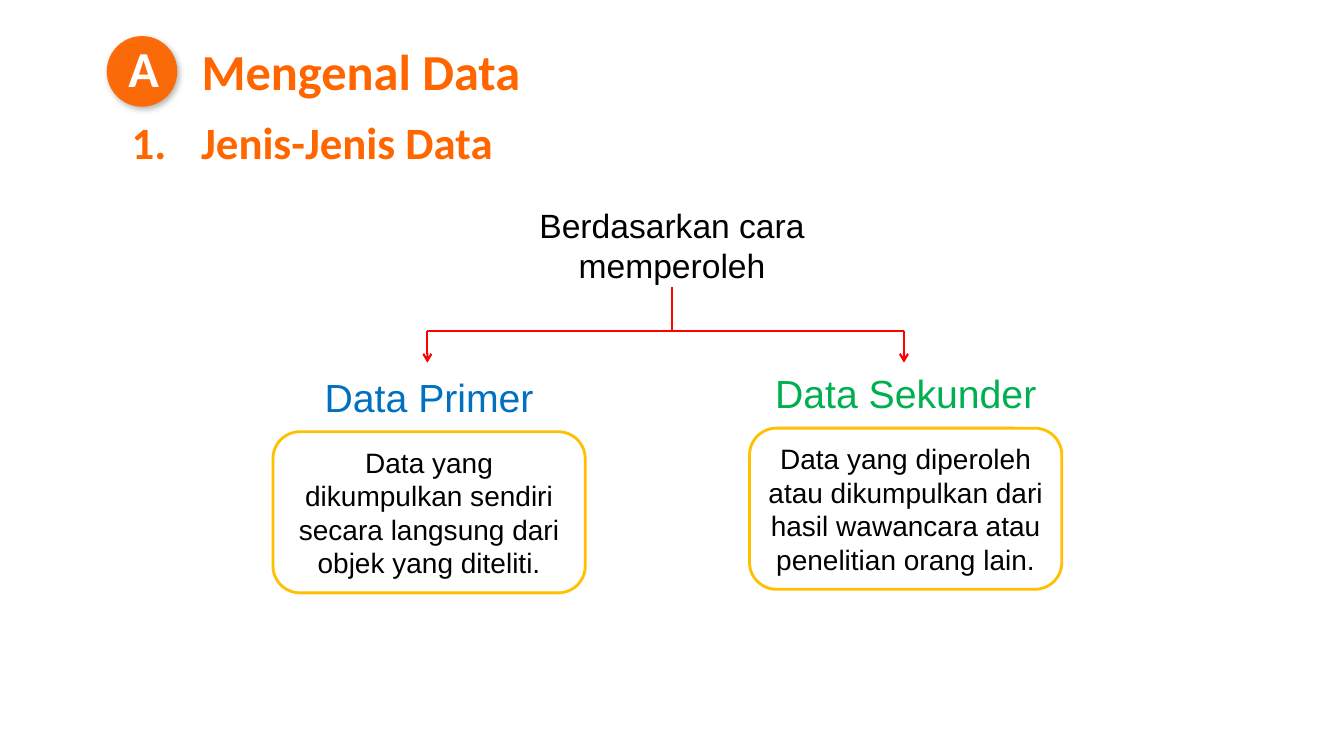
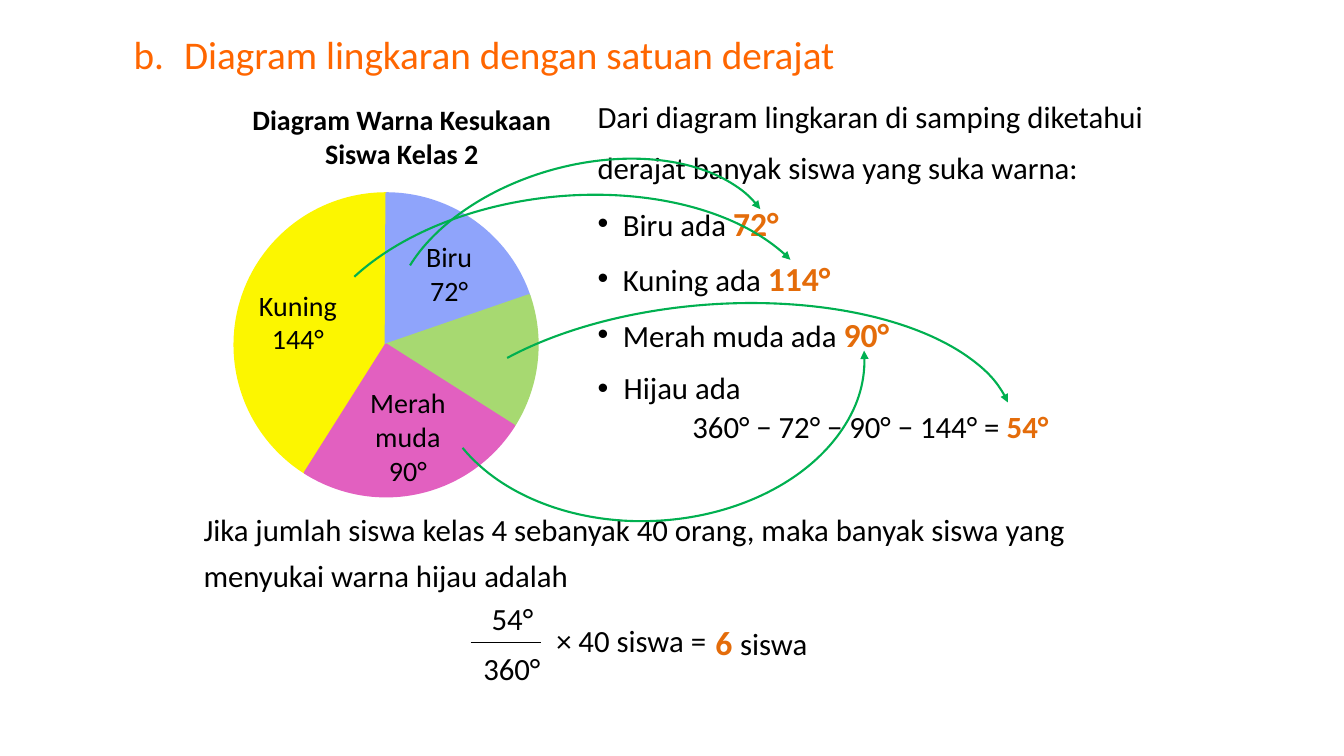
import itertools

import lxml.etree
import pptx
import pptx.dml.color
import pptx.enum.shapes
import pptx.enum.text
import pptx.oxml.ns
import pptx.util

Cm = pptx.util.Cm
SHAPE = pptx.enum.shapes.MSO_SHAPE
CENTER = pptx.enum.text.PP_ALIGN.CENTER
MIDDLE = pptx.enum.text.MSO_ANCHOR.MIDDLE
TOP = pptx.enum.text.MSO_ANCHOR.TOP

ORANGE = "FF6600"
ACCENT = "E46C0A"
BLACK = "000000"
RED = "FF0000"
GREEN = "00B050"
BLUE = "0070C0"
GOLD = "FFC000"


def rgb(value):
    return pptx.dml.color.RGBColor.from_string(value)


def add_xml(parent, tag, **attributes):
    child = lxml.etree.SubElement(parent, pptx.oxml.ns.qn(tag))
    for key, value in attributes.items():
        child.set(key, str(value))
    return child


def key(text, size=24):
    """A highlighted run."""
    return text, size


class Deck:
    body_font = "Calibri"
    diagram_font = "Arial"

    def __init__(self):
        self.file = pptx.Presentation()
        self.file.slide_width = Cm(33.87)
        self.file.slide_height = Cm(19.05)
        self.slide = None

    def new_slide(self):
        self.slide = self.file.slides.add_slide(self.file.slide_layouts[6])

    def text(self, box, *paragraphs, anchor=TOP, **style):
        """Each paragraph is a string or a list of strings and key() runs."""
        frame = self.slide.shapes.add_textbox(*map(Cm, box)).text_frame
        self.fill_frame(frame, paragraphs, anchor, **style)

    def fill_frame(self, frame, paragraphs, anchor, size=22, color=BLACK, bold=False,
                   font=body_font, align=None, spacing=None, hanging=None, tab=None):
        frame.word_wrap = True
        frame.vertical_anchor = anchor
        for index, content in enumerate(paragraphs):
            paragraph = frame.paragraphs[0] if index == 0 else frame.add_paragraph()
            properties = paragraph._p.get_or_add_pPr()
            if hanging:
                properties.set("marL", str(Cm(hanging)))
                properties.set("indent", str(-Cm(hanging)))
                add_xml(properties, "a:buFont", typeface="Arial")
                add_xml(properties, "a:buChar", char="•")
            if tab:
                stops = add_xml(properties, "a:tabLst")
                add_xml(stops, "a:tab", pos=Cm(tab), algn="l")
            paragraph.alignment = align
            paragraph.line_spacing = spacing
            paragraph.font.name = font
            paragraph.font.size = pptx.util.Pt(size)
            paragraph.font.bold = bold
            paragraph.font.color.rgb = rgb(color)
            for part in [content] if isinstance(content, str) else content:
                run = paragraph.add_run()
                if isinstance(part, str):
                    run.text = part
                else:
                    run.text, key_size = part
                    run.font.size = pptx.util.Pt(key_size)
                    run.font.bold = True
                    run.font.color.rgb = rgb(ACCENT)

    def heading(self, box, text, size, **style):
        self.text(box, text, size=size, color=ORANGE, **style)

    def shape(self, kind, box, fill=None, line=None, width=2.0):
        shape = self.slide.shapes.add_shape(kind, *map(Cm, box))
        shape.shadow.inherit = False
        if fill:
            shape.fill.solid()
            shape.fill.fore_color.rgb = rgb(fill)
        else:
            shape.fill.background()
        if line:
            shape.line.color.rgb = rgb(line)
            shape.line.width = pptx.util.Pt(width)
        else:
            shape.line.fill.background()
        return shape

    def badge(self, box, letter):
        """A slightly see-through disc with a soft shadow and a letter."""
        disc = self.shape(SHAPE.OVAL, box, fill=ORANGE)
        properties = disc._element.spPr
        tint = properties.find(".//" + pptx.oxml.ns.qn("a:srgbClr"))
        add_xml(tint, "a:alpha", val=95000)
        effects = properties.find(pptx.oxml.ns.qn("a:effectLst"))
        shadow = add_xml(effects, "a:outerShdw", blurRad=pptx.util.Pt(4.5),
                         dist=pptx.util.Pt(2.6), dir=53 * 60000,
                         algn="tl", rotWithShape=0)
        add_xml(add_xml(shadow, "a:srgbClr", val=BLACK), "a:alpha", val=30000)
        left, top, width, height = box
        self.text((left + 0.04, top - 0.1, width, height), letter,
                  size=36, color="FFFFFF", bold=True, align=CENTER)

    def card(self, box, text):
        card = self.shape(SHAPE.ROUNDED_RECTANGLE, box, line=GOLD)
        self.fill_frame(card.text_frame, [text], MIDDLE, size=20,
                        font=self.diagram_font, align=CENTER)

    def label(self, box, text, size, color=BLACK):
        self.text(box, text, anchor=MIDDLE, size=size, color=color,
                  font=self.diagram_font, align=CENTER)

    def line(self, x1, y1, x2, y2, color=RED, width=1.5, arrow=False):
        line = self.slide.shapes.add_connector(
            pptx.enum.shapes.MSO_CONNECTOR.STRAIGHT, *map(Cm, (x1, y1, x2, y2)))
        line.line.color.rgb = rgb(color)
        line.line.width = pptx.util.Pt(width)
        if arrow:
            add_xml(line.line._get_or_add_ln(), "a:tailEnd", type="arrow")
        add_xml(line._element.spPr, "a:effectLst")

    def sweep(self, shape, start, end):
        """Set the angles of a pie or an arc, in degrees clockwise from east."""
        shape.adjustments[0] = start * 0.6
        shape.adjustments[1] = end * 0.6

    def sector(self, box, start, end, color):
        self.sweep(self.shape(SHAPE.PIE, box, fill=color, line=color), start, end)

    def curved_arrow(self, box, rotation, start, end, tip="a:tailEnd"):
        arc = self.shape(SHAPE.ARC, box, line=GREEN, width=1.5)
        self.sweep(arc, start, end)
        arc.rotation = rotation
        add_xml(arc.line._get_or_add_ln(), tip, type="triangle")


def data_types(deck):
    deck.new_slide()
    deck.heading((4.83, 0.89, 11.07, 1.8), "Mengenal Data", 36, bold=True)
    deck.badge((2.69, 0.91, 1.78, 1.78), "A")
    deck.heading((3.07, 2.77, 12, 1.63), "1.\tJenis-Jenis Data", 32, bold=True, tab=1.75)

    width = 7.87
    deck.label((13, 5.11, width, 2.13), "Berdasarkan cara memperoleh", 24)
    branches = [
        (10.77, 9.24, "Data Primer", BLUE,
         "Data yang dikumpulkan sendiri secara langsung dari objek yang diteliti."),
        (22.78, 9.15, "Data Sekunder", GREEN,
         "Data yang diperoleh atau dikumpulkan dari hasil wawancara atau penelitian "
         "orang lain."),
    ]
    fork = 8.33
    deck.line(16.94, 7.24, 16.94, fork)
    deck.line(branches[0][0], fork, branches[1][0], fork)
    for stem, top, name, color, meaning in branches:
        left = stem - 3.89
        deck.line(stem, fork, stem, 9.14, arrow=True)
        deck.label((left, top, width, 1.52), name, 28, color)
        deck.card((left, top + 1.64, width, 4.06), meaning)


def degree_pie(deck):
    deck.new_slide()
    deck.heading((3.12, 0.64, 20, 1.45), "b.\tDiagram lingkaran dengan satuan derajat",
                 28, tab=1.27)

    deck.text((5.92, 2.46, 8.41, 1.96), "Diagram Warna Kesukaan", "Siswa Kelas 2",
              size=20, bold=True, align=CENTER)
    edges = [122.3, 270.3, 341, 32.4, 122.3]
    colors = ["FCF600", "8FA4FB", "A7D971", "E260C0"]
    for (start, end), color in zip(itertools.pairwise(edges), colors):
        deck.sector((5.92, 4.88, 7.62, 7.62), start, end, color)
    for left, top, name, degrees in [(5.92, 7.14, "Kuning", "144°"),
                                     (9.73, 5.92, "Biru", "72°"),
                                     (8.69, 9.6, "Merah muda", "90°")]:
        deck.text((left, top, 3.18, 1.96), name, degrees, size=20, align=CENTER)

    column, width = 14.81, 15
    deck.text((column, 2.34, width, 1.19), "Dari diagram lingkaran di samping diketahui")
    deck.text((column, 3.38, width, 1.35), "derajat banyak siswa yang suka warna:",
              spacing=1.25)
    known = [("Biru ada ", "72°"), ("Kuning ada ", "114°"), ("Merah muda ada ", "90°")]
    for row, (name, degrees) in enumerate(known):
        deck.text((column, 4.98 + 1.4 * row, width, 1.27), [name, key(degrees)],
                  hanging=0.64)
    deck.text((column, 8.94, width, 1.35), "Hijau ada", spacing=1.25, hanging=0.66)
    deck.text((17.2, 10.16, 10, 1.19), ["360° − 72° − 90° − 144° = ", key("54°", 22)])

    question = ["Jika jumlah siswa kelas 4 sebanyak 40 orang, maka banyak siswa yang",
                "menyukai warna hijau adalah"]
    for row, words in enumerate(question):
        deck.text((4.88, 12.52 + 1.15 * row, 23.93, 1.35), words, spacing=1.25)
    deck.text((11.86, 14.99, 2.11, 1.19), "54°", align=CENTER)
    deck.line(11.86, 16.19, 13.64, 16.19, color=BLACK, width=1)
    deck.text((11.63, 16.26, 2.54, 1.19), "360°", align=CENTER)
    deck.text((13.77, 15.54, 4.88, 1.19), "× 40 siswa =")
    deck.text((17.78, 15.54, 3.61, 1.27), [key("6 "), "siswa"])

    deck.curved_arrow((10.92, 5.26, 10.87, 7.87), -2.9, 359.12, 158.89, tip="a:headEnd")
    deck.curved_arrow((10.54, 7.67, 15.04, 7.29), -4.3, 207.79, 355.23)
    deck.curved_arrow((9.8, 4.17, 9.86, 6.15), -15.7, 202.93, 351.7)
    deck.curved_arrow((7.7, 4.95, 13.08, 7.87), -6.4, 206.19, 344.03)


def main():
    deck = Deck()
    data_types(deck)
    degree_pie(deck)
    deck.file.save("out.pptx")


if __name__ == "__main__":
    main()
